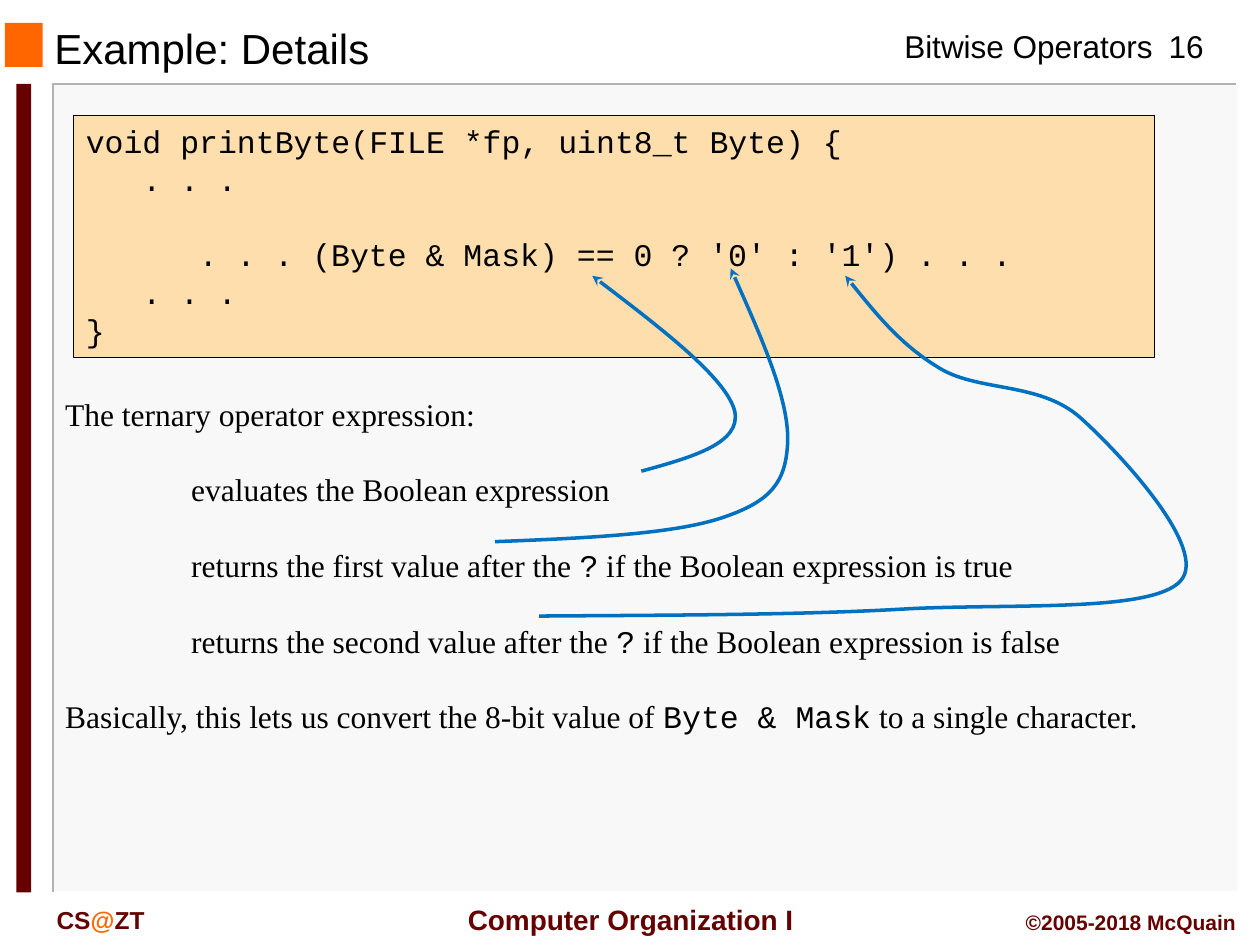
from lxml import etree
from pptx import Presentation
from pptx.dml.color import RGBColor
from pptx.enum.shapes import MSO_SHAPE
from pptx.enum.text import MSO_ANCHOR, MSO_AUTO_SIZE, PP_ALIGN
from pptx.oxml.ns import qn
from pptx.util import Cm, Pt

RECT = MSO_SHAPE.RECTANGLE
LEFT, CENTER, RIGHT = PP_ALIGN.LEFT, PP_ALIGN.CENTER, PP_ALIGN.RIGHT
TOP, MIDDLE = MSO_ANCHOR.TOP, MSO_ANCHOR.MIDDLE
SANS, SERIF, MONO = "Arial", "Times New Roman", "Courier New"
BLACK, MAROON, ORANGE, BLUE = "000000", "660000", "FF6600", "0070C0"
LINE = 21.6  # line pitch of code and text, in points

# Content: positions are left, top, width, height in cm
TITLE = "Example: Details"
PANELS = [
    ((1.09, 1.7, 23.88, 16.28), "F8F8F8"),
    ((0.1, 0.46, 0.76, 0.89), ORANGE),
    ((0.33, 1.69, 0.3, 16.3), MAROON),
]
EDGES = [
    ([(24.92, 1.7), (1.07, 1.7), (1.07, 17.98)], "B2B2B2"),
    ([(24.97, 1.7), (24.97, 17.98), (1.12, 17.98)], "FFFFFF"),
]
LABELS = [
    ((17.98, 0.43, 5.56, 1.02), ["Bitwise Operators"], dict(size=18)),
    ((23.06, 0.43, 1.7, 1.02), ["16"], dict(size=18, align=CENTER)),
    ((9.02, 18.06, 7.39, 0.94), ["Computer Organization I"],
     dict(size=16, color=MAROON, bold=True, align=CENTER)),
    ((0.89, 18.11, 3.81, 0.84), ["CS", ("@", dict(color=ORANGE)), "ZT"],
     dict(size=14, color=MAROON, bold=True)),
    ((19.89, 18.21, 5.28, 0.76), ["©2005-2018 McQuain"],
     dict(size=12, color=MAROON, bold=True, align=RIGHT)),
]
# Code lines: indent in characters, blank lines before, text
CODE = [
    (0, 0, "void printByte(FILE *fp, uint8_t Byte) {"),
    (3, 0, ". . ."),
    (6, 1, ". . . (Byte & Mask) == 0 ? '0' : '1') . . ."),
    (3, 0, ". . ."),
    (0, 0, "}"),
]
CODE_CHAR = 0.38  # width of one code character in cm
AS_CODE = dict(font=MONO)
# Explanation: indent in cm, runs
BODY = [
    (0, ["The ternary operator expression:"]),
    (2.54, ["evaluates the Boolean expression"]),
    (2.54, ["returns the first value after the ", ("?", AS_CODE),
            " if the Boolean expression is true"]),
    (2.54, ["returns the second value after the ", ("?", AS_CODE),
            " if the Boolean expression is false"]),
    (0, ["Basically, this lets us convert the 8-bit value of ",
         ("Byte & Mask", AS_CODE), " to a single character."]),
]
# Curved arrows: start, then (control, control, end) for each segment
ARROWS = [
    ((12.93, 9.5), [
        ((13.94, 9.22), (14.96, 8.94), (14.81, 8.28)),
        ((14.63, 7.62), (13.28, 6.58), (11.94, 5.56))]),
    ((9.98, 10.92), [
        ((11.79, 10.85), (13.56, 10.77), (14.55, 10.44)),
        ((15.54, 10.11), (15.85, 9.73), (15.88, 8.89)),
        ((15.9, 8.05), (15.32, 6.73), (14.73, 5.41))]),
    ((10.87, 12.42), [
        ((13.54, 12.4), (16.21, 12.4), (18.36, 12.27)),
        ((20.5, 12.17), (23.24, 12.34), (23.8, 11.71)),
        ((24.38, 11.07), (22.58, 9.14), (21.79, 8.43)),
        ((20.98, 7.7), (19.76, 7.9), (18.97, 7.44)),
        ((18.16, 6.96), (17.6, 6.25), (17.04, 5.56))]),
]


def rgb(color):
    return RGBColor.from_string(color)


def place(sp, box):
    sp.left, sp.top, sp.width, sp.height = (Cm(v) for v in box)


def frame(sp, anchor=TOP, wrap=True):
    tf = sp.text_frame
    tf.auto_size = MSO_AUTO_SIZE.NONE
    tf.word_wrap = wrap
    tf.vertical_anchor = anchor
    return tf


def write(p, runs, size=18, color=BLACK, font=SANS, bold=False, align=LEFT,
          indent=0, before=0, pitch=None):
    p.alignment = align
    p.space_before, p.space_after = Pt(before), Pt(0)
    if pitch:
        p.line_spacing = Pt(pitch)
    pPr = p._p.get_or_add_pPr()
    pPr.set("marL", str(Cm(indent)))
    pPr.set("indent", "0")
    etree.SubElement(pPr, qn("a:buNone"))
    for run in runs:
        text, own = (run, {}) if isinstance(run, str) else run
        r = p.add_run()
        r.text = text
        r.font.size, r.font.bold = Pt(size), bold
        r.font.name = own.get("font", font)
        r.font.color.rgb = rgb(own.get("color", color))


def write_lines(tf, lines):
    for i, (runs, style) in enumerate(lines):
        p = tf.paragraphs[0] if i == 0 else tf.add_paragraph()
        write(p, runs, pitch=LINE, **style)


def rect(shapes, box, fill, line=None):
    sp = shapes.add_shape(RECT, *(Cm(v) for v in box))
    sp.shadow.inherit = False
    sp.fill.solid()
    sp.fill.fore_color.rgb = rgb(fill)
    if line:
        sp.line.color.rgb = rgb(line)
        sp.line.width = Pt(0.75)
    else:
        sp.line.fill.background()
    return sp


def polyline(shapes, points, color, width):
    pts = [(Cm(x), Cm(y)) for x, y in points]
    fb = shapes.build_freeform(*pts[0])
    fb.add_line_segments(pts[1:], close=False)
    sp = fb.convert_to_shape()
    sp.shadow.inherit = False
    sp.fill.background()
    sp.line.color.rgb = rgb(color)
    sp.line.width = Pt(width)
    return sp


def curved_arrow(shapes, start, segments):
    sp = polyline(shapes, [start] + [s[-1] for s in segments], BLUE, 2)
    # Turn each straight segment into a Bezier curve
    for seg, controls in zip(sp._element.xpath(".//a:lnTo"), segments):
        seg.tag = qn("a:cubicBezTo")
        for i, (x, y) in enumerate(controls[:2]):
            pt = etree.Element(qn("a:pt"), x=str(Cm(x) - sp.left), y=str(Cm(y) - sp.top))
            seg.insert(i, pt)
    etree.SubElement(sp.line._get_or_add_ln(), qn("a:tailEnd"), type="stealth")


def main():
    prs = Presentation()
    prs.slide_width, prs.slide_height = Cm(25.4), Cm(19.05)
    slide = prs.slides.add_slide(prs.slide_layouts[1])
    shapes = slide.shapes
    title, body = slide.placeholders

    # Frame of the slide
    for box, fill in PANELS:
        rect(shapes, box, fill)
    for points, color in EDGES:
        polyline(shapes, points, color, 1)
    for box, runs, style in LABELS:
        sp = shapes.add_textbox(*(Cm(v) for v in box))
        write(frame(sp, wrap=False).paragraphs[0], runs, **style)

    # Title
    place(title, (0.84, 0.48, 16.08, 0.97))
    write(frame(title, MIDDLE).paragraphs[0], [TITLE], size=24)

    # Code box
    code = rect(shapes, (1.48, 2.33, 21.8, 4.88), "FFDEAD", BLACK)
    write_lines(frame(code), [
        ([text], dict(font=MONO, indent=chars * CODE_CHAR, before=blanks * LINE))
        for chars, blanks, text in CODE])

    # Explanation
    place(body, (1.06, 7.83, 23.92, 7.2))
    write_lines(frame(body), [
        (runs, dict(font=SERIF, indent=indent, before=LINE if i else 0))
        for i, (indent, runs) in enumerate(BODY)])

    # Keep the placeholders above the panels
    for sp in (title, body):
        shapes._spTree.append(sp._element)

    # Arrows from explanation to code
    for start, segments in ARROWS:
        curved_arrow(shapes, start, segments)

    prs.save("out.pptx")


if __name__ == "__main__":
    main()
